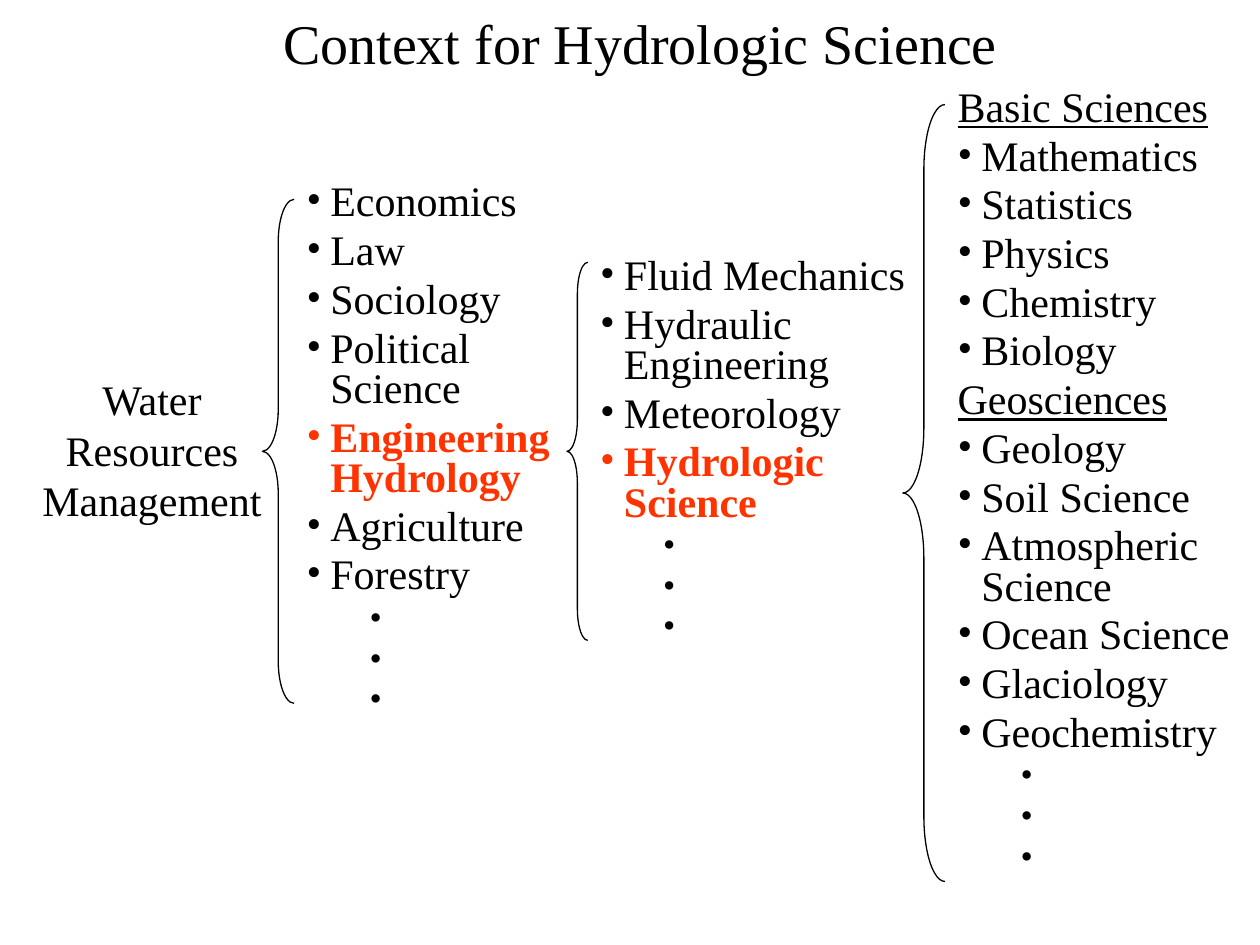
from lxml.etree import SubElement
from pptx import Presentation
from pptx.dml.color import RGBColor
from pptx.enum.shapes import MSO_SHAPE
from pptx.enum.text import MSO_ANCHOR, MSO_AUTO_SIZE, PP_ALIGN
from pptx.oxml.ns import qn
from pptx.util import Cm, Pt

FONT = "Times New Roman"
BLACK, RED = "000000", "FF3300"
DOTS = 3

SOCIAL = ["Economics", "Law", "Sociology", "Political Science",
          "Engineering Hydrology", "Agriculture", "Forestry"]
FLUID = ["Fluid Mechanics", "Hydraulic Engineering", "Meteorology",
         "Hydrologic Science"]
BASIC = ["Basic Sciences", "Mathematics", "Statistics", "Physics",
         "Chemistry", "Biology", "Geosciences", "Geology", "Soil Science",
         "Atmospheric Science", "Ocean Science", "Glaciology", "Geochemistry"]
HEADS = {"Basic Sciences", "Geosciences"}
KEYS = {"Engineering Hydrology", "Hydrologic Science"}


def color(text):
    return RGBColor.from_string(text)


def write(par, text, size=24, tint=BLACK, bold=False, line=False, align=None):
    par.alignment = align
    run = par.add_run()
    run.text = text
    font = run.font
    font.name, font.size, font.bold = FONT, Pt(size), bold
    font.underline = line
    font.color.rgb = color(tint)


def place(shape, x, y, w, h):
    shape.left, shape.top = Cm(x), Cm(y)
    shape.width, shape.height = Cm(w), Cm(h)


def indent(par, size, left, hang, mark=True):
    par.line_spacing = 0.8
    par.space_before = Pt(size * 0.2)
    props = par._p.get_or_add_pPr()
    props.set("marL", str(Cm(left)))
    props.set("indent", str(-Cm(hang)))
    if mark:
        SubElement(props, qn("a:buFont")).set("typeface", FONT)
        SubElement(props, qn("a:buChar")).set("char", "•")
    else:
        SubElement(props, qn("a:buNone"))


def fill(frame, items):
    frame.word_wrap = True
    frame.auto_size = MSO_AUTO_SIZE.NONE
    frame.vertical_anchor = MSO_ANCHOR.TOP
    for i, item in enumerate(items + [" "] * DOTS):
        par = frame.add_paragraph() if i else frame.paragraphs[0]
        head, key = item in HEADS, item in KEYS
        if item == " ":  # lone bullets that carry the list on
            par.level = 1
            indent(par, 20, 2.06, 0.79)
            write(par, item, size=20)
        else:
            indent(par, 24, 0.48, 0.48, mark=not head)
            write(par, item, tint=RED if key else BLACK, bold=key, line=head)


def brace(slide, x, y, w, h):
    shape = slide.shapes.add_shape(
        MSO_SHAPE.LEFT_BRACE, Cm(x), Cm(y), Cm(w), Cm(h))
    shape.shadow.inherit = False
    shape.fill.background()
    shape.line.color.rgb = color(BLACK)
    shape.line.width = Pt(0.75)
    shape.adjustments[0] = h / w / 12  # curl is a twelfth of the height
    shape.adjustments[1] = 0.5


def column(slide, box, items, drop, wide, tall, body=None):
    """A list with a brace on its left side, starting drop below its top."""
    x, y, w, h = box
    shape = body or slide.shapes.add_textbox(0, 0, 0, 0)
    place(shape, x, y, w, h)
    fill(shape.text_frame, items)
    brace(slide, x - wide, y + drop, wide, tall)


def title(slide, box):
    shape = slide.shapes.title
    place(shape, *box)
    frame = shape.text_frame
    frame.auto_size = MSO_AUTO_SIZE.NONE
    frame.vertical_anchor = MSO_ANCHOR.MIDDLE
    write(frame.paragraphs[0], "Context for Hydrologic Science", size=32,
          align=PP_ALIGN.CENTER)


def root(slide, box):
    shape = slide.shapes.add_textbox(0, 0, 0, 0)
    place(shape, *box)
    frame = shape.text_frame
    frame.word_wrap = True
    write(frame.paragraphs[0], "Water Resources Management",
          align=PP_ALIGN.CENTER)


def main():
    deck = Presentation()
    deck.slide_width, deck.slide_height = Cm(25.4), Cm(19.05)
    slide = deck.slides.add_slide(deck.slide_layouts[1])

    title(slide, (2.12, 0, 21.59, 1.69))
    # Columns run from the broad field to its foundations
    root(slide, (0.42, 7.41, 5.29, 3.3))
    column(slide, (5.93, 3.6, 6.35, 8.89), SOCIAL, 0.42, 0.64, 10.16)
    column(slide, (11.85, 5.08, 6.77, 8.89), FLUID, 0.21, 0.42, 7.62)
    column(slide, (19.05, 1.69, 7.2, 15.88), BASIC, 0.42, 0.85, 15.66,
           body=slide.placeholders[1])
    deck.save("out.pptx")


if __name__ == "__main__":
    main()
